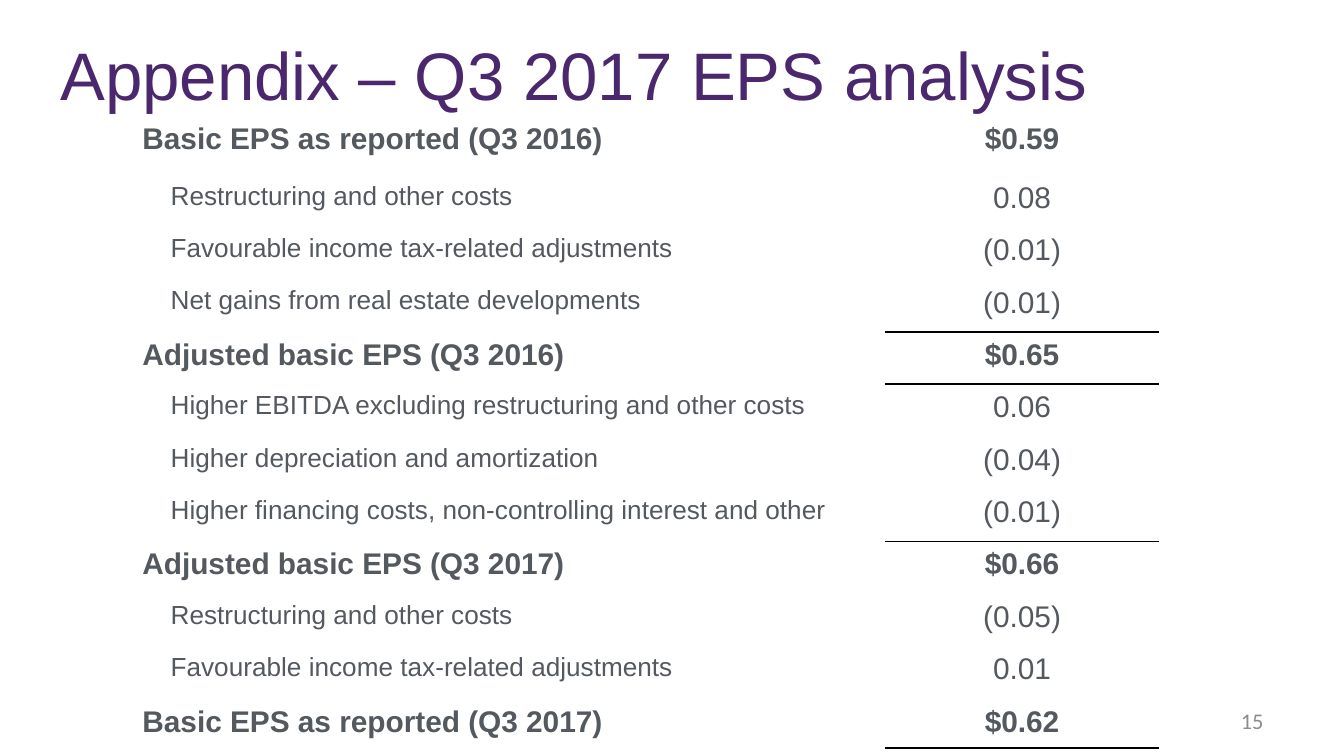
"""Build the Q3 2017 EPS analysis appendix slide."""
from dataclasses import dataclass

from lxml import etree
from pptx import Presentation
from pptx import util as u
from pptx.dml.color import RGBColor
from pptx.enum import text
from pptx.oxml import ns

PURPLE = RGBColor(0x4B, 0x28, 0x6D)
SLATE = RGBColor(0x54, 0x59, 0x5F)
GREY = RGBColor(0x8C, 0x8C, 0x8C)
WHITE = RGBColor(0xFF, 0xFF, 0xFF)
BLACK = RGBColor(0x00, 0x00, 0x00)

SLIDE_WIDTH = 10
SLIDE_HEIGHT = SLIDE_WIDTH * 9 / 16
COLUMN_WIDTHS = (5.63, 2.03)
FIRST_HEIGHT, ROW_HEIGHT, LAST_HEIGHT = 0.44, 0.39, 0.35


@dataclass(frozen=True)
class Box:
    left: float
    top: float
    width: float
    height: float

    def lengths(self) -> tuple:
        return tuple(u.Inches(v) for v in (self.left, self.top, self.width, self.height))


@dataclass(frozen=True)
class Entry:
    label: str
    amount: str
    total: bool = False
    ruled_below: bool = False
    right_margin: float = 0.1


ENTRIES = (
    Entry("Basic EPS as reported (Q3 2016)", "$0.59", total=True),
    Entry("Restructuring and other costs", "0.08"),
    Entry("Favourable income tax-related adjustments", "(0.01)"),
    Entry("Net gains from real estate developments", "(0.01)", ruled_below=True),
    Entry("Adjusted basic EPS (Q3 2016)", "$0.65", total=True, ruled_below=True),
    Entry("Higher EBITDA excluding restructuring and other costs", "0.06", right_margin=0.31),
    Entry("Higher depreciation and amortization", "(0.04)", right_margin=0.31),
    Entry("Higher financing costs, non-controlling interest and other", "(0.01)",
          ruled_below=True, right_margin=0.31),
    Entry("Adjusted basic EPS (Q3 2017)", "$0.66", total=True),
    Entry("Restructuring and other costs", "(0.05)"),
    Entry("Favourable income tax-related adjustments", "0.01"),
    Entry("Basic EPS as reported (Q3 2017)", "$0.62", total=True, ruled_below=True),
)


def write(frame, wording: str, color: RGBColor, align=text.PP_ALIGN.LEFT, **font_values) -> None:
    paragraph = frame.paragraphs[0]
    paragraph.alignment = align
    run = paragraph.add_run()
    run.text = wording
    for name, value in font_values.items():
        setattr(run.font, name, value)
    run.font.color.rgb = color


def add_text(slide, box: Box, wording: str, color: RGBColor, frame_values: dict,
             align=text.PP_ALIGN.LEFT, **font_values) -> None:
    frame = slide.shapes.add_textbox(*box.lengths()).text_frame
    for name, value in frame_values.items():
        setattr(frame, name, value)
    write(frame, wording, color, align, **font_values)


def add_border(cell, tag: str) -> None:
    line = etree.Element(ns.qn(f"a:{tag}"), w=str(u.Pt(1)))
    fill = etree.SubElement(line, ns.qn("a:solidFill"))
    etree.SubElement(fill, ns.qn("a:srgbClr"), val=str(BLACK))
    cell._tc.get_or_add_tcPr().insert(0, line)


def fill_row(table, index: int, entry: Entry) -> None:
    label, amount = table.cell(index, 0), table.cell(index, 1)
    for cell in (label, amount):
        cell.fill.solid()
        cell.fill.fore_color.rgb = WHITE
    if not entry.total:
        label.margin_left = u.Inches(0.31)
        label.margin_right = u.Inches(entry.right_margin)
    write(label.text_frame, entry.label, SLATE, name="Arial",
          size=u.Pt(16 if entry.total else 14), bold=entry.total)
    write(amount.text_frame, entry.amount, SLATE, text.PP_ALIGN.CENTER,
          name="Arial", size=u.Pt(16), bold=entry.total)
    if entry.ruled_below:
        add_border(amount, "lnB")
    if index and ENTRIES[index - 1].ruled_below:
        add_border(amount, "lnT")


def add_eps_table(slide, box: Box) -> None:
    table = slide.shapes.add_table(len(ENTRIES), len(COLUMN_WIDTHS), *box.lengths()).table
    table.first_row = table.horz_banding = False
    for column, width in zip(table.columns, COLUMN_WIDTHS):
        column.width = u.Inches(width)
    heights = [FIRST_HEIGHT, *[ROW_HEIGHT] * (len(ENTRIES) - 2), LAST_HEIGHT]
    for index, (entry, height) in enumerate(zip(ENTRIES, heights)):
        table.rows[index].height = u.Inches(height)
        fill_row(table, index, entry)


def main() -> None:
    presentation = Presentation()
    presentation.slide_width = u.Inches(SLIDE_WIDTH)
    presentation.slide_height = u.Inches(SLIDE_HEIGHT)
    slide = presentation.slides.add_slide(presentation.slide_layouts[6])
    add_text(slide, Box(0.35, 0.2, 7.92, 0.71), "Appendix – Q3 2017 EPS analysis", PURPLE,
             {"word_wrap": False, "auto_size": text.MSO_AUTO_SIZE.SHAPE_TO_FIT_TEXT},
             name="Arial", size=u.Pt(36))
    add_eps_table(slide, Box(0.96, 0.86, 7.66, 4.7))
    add_text(slide, Box(7.17, 5.21, 2.33, 0.3), "15", GREY,
             {"word_wrap": True, "vertical_anchor": text.MSO_ANCHOR.MIDDLE},
             text.PP_ALIGN.RIGHT, name="Calibri", size=u.Pt(12))
    presentation.save("out.pptx")


if __name__ == "__main__":
    main()
